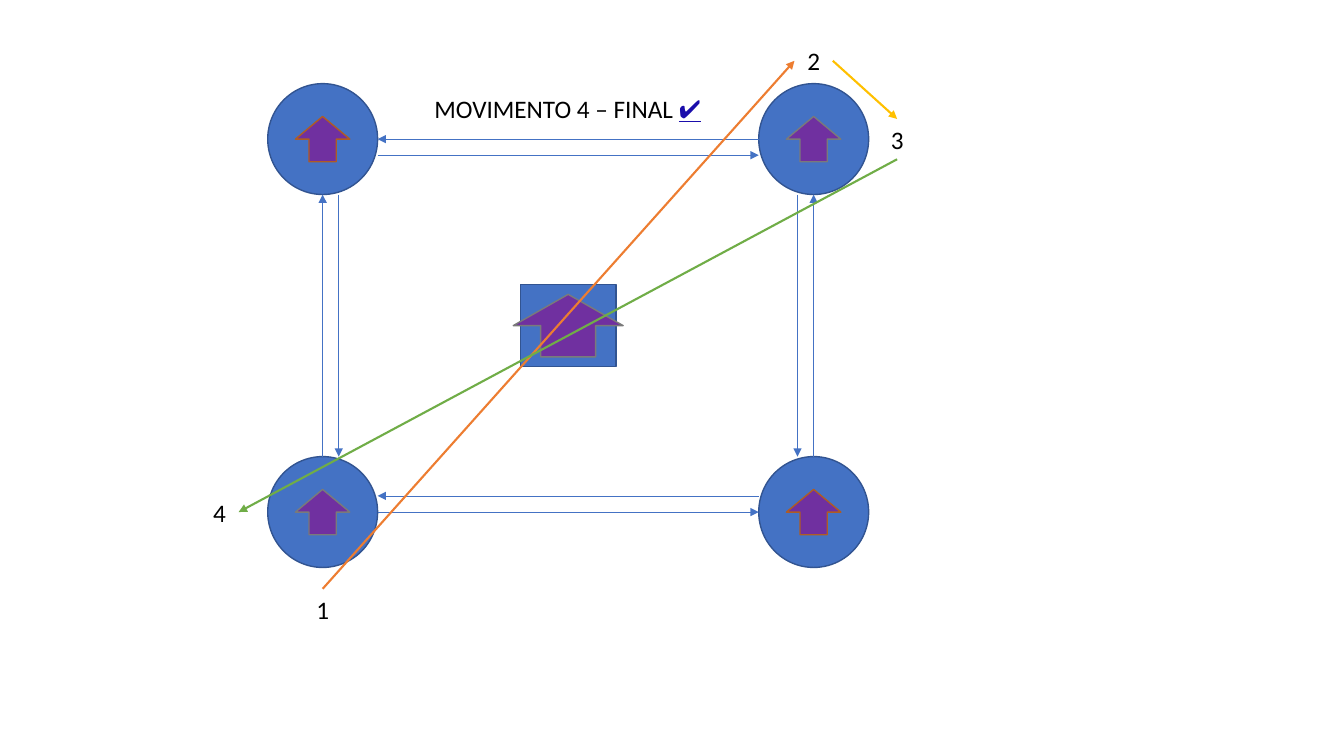
from dataclasses import dataclass
from itertools import product

from lxml.etree import SubElement
from pptx import Presentation
from pptx.dml.color import RGBColor
from pptx.enum.shapes import MSO_CONNECTOR as Connector, MSO_SHAPE as Shape
from pptx.enum.text import MSO_ANCHOR as Anchor, MSO_AUTO_SIZE as AutoSize, PP_ALIGN as Align
from pptx.oxml.ns import qn
from pptx.util import Inches, Pt

COLORS = {
    "blue": "4472C4", "blue_edge": "325491", "purple": "7030A0",
    "gray": "7A7A7A", "brown": "AF5C24", "black": "000000", "link": "1A0DAB",
    "orange": "ED7D31", "yellow": "FFC000", "green": "70AD47",
}
CIRCLE = (1.09, 1.1)
POST = (0.95, 0.81)
LABEL = (0.38, 0.4)
LANE_GAP = 0.16
TOP, LEFT, BOTTOM, RIGHT = range(4)


@dataclass
class Box:
    """A region in inches whose inner points are given as shares."""
    left: float
    top: float
    width: float
    height: float

    def point(self, column, row):
        """Return the point at the given shares of width and height."""
        return self.left + column * self.width, self.top + row * self.height


def color(name):
    """Return the named palette colour."""
    return RGBColor.from_string(COLORS[name])


def frame(center, size):
    """Return left, top, width and height of a centred area."""
    (x, y), (width, height) = center, size
    return [Inches(v) for v in (x - width / 2, y - height / 2, width, height)]


def add_figure(slide, kind, center, size, fill, edge, rotation=0):
    """Add a filled preset shape around a centre."""
    shape = slide.shapes.add_shape(kind, *frame(center, size))
    shape.rotation = rotation
    shape.shadow.inherit = False
    shape.fill.solid()
    shape.fill.fore_color.rgb = color(fill)
    shape.line.color.rgb = color(edge)
    shape.line.width = Pt(1)


def add_arrow(slide, start, end, line_color, width):
    """Add a straight line with a triangle at its end."""
    arrow = slide.shapes.add_connector(
        Connector.STRAIGHT, *[Inches(v) for v in (*start, *end)])
    arrow.line.color.rgb = color(line_color)
    arrow.line.width = Pt(width)
    SubElement(arrow.line._get_or_add_ln(), qn("a:tailEnd"), type="triangle")
    SubElement(arrow._element.spPr, qn("a:effectLst"))
    return arrow


def write(shape, text):
    """Set centred 18 point black text and return its paragraph."""
    text_frame = shape.text_frame
    text_frame.text = text
    text_frame.word_wrap = True
    text_frame.auto_size = AutoSize.SHAPE_TO_FIT_TEXT
    text_frame.vertical_anchor = Anchor.TOP
    paragraph = text_frame.paragraphs[0]
    paragraph.alignment = Align.CENTER
    style(paragraph.runs[0], "Calibri", "black")
    return paragraph


def style(run, font_name, font_color):
    """Format a run at 18 points."""
    run.font.size = Pt(18)
    run.font.name = font_name
    run.font.color.rgb = color(font_color)


def add_title(slide, box):
    """Place the title with its check mark."""
    title = slide.shapes.title
    title.left, title.top, title.width, title.height = [
        Inches(v) for v in (box.left, box.top, box.width, box.height)]
    paragraph = write(title, "MOVIMENTO 4 – FINAL ")
    check = paragraph.add_run()
    check.text = "✔️"
    style(check, "Arial", "link")
    check.font.underline = True


def add_lanes(slide, box):
    """Draw a pair of opposite lanes along each side of the formation."""
    half_width, half_height = (length / 2 for length in CIRCLE)
    right, bottom = box.point(1, 1)
    high, low = box.top + half_height, bottom - half_height
    near, far = box.left + half_width, right - half_width
    for x, inward in ((box.left, LANE_GAP), (right, -LANE_GAP)):
        add_arrow(slide, (x, low), (x, high), "blue", 0.5)
        add_arrow(slide, (x + inward, high), (x + inward, low), "blue", 0.5)
    for left_y, right_y in ((box.top, box.top + LANE_GAP), (bottom - LANE_GAP, bottom)):
        add_arrow(slide, (far, left_y), (near, left_y), "blue", 0.5)
        add_arrow(slide, (near, right_y), (far, right_y), "blue", 0.5)


def add_formation(slide, box):
    """Draw the four corner circles, the lanes and the central post."""
    corners = list(product((0, 1), repeat=2))
    for corner in corners:
        add_figure(slide, Shape.OVAL, box.point(*corner), CIRCLE, "blue", "blue_edge")
    add_lanes(slide, box)
    middle = box.point(0.5, 0.5)
    add_figure(slide, Shape.RECTANGLE, middle, POST, "blue", "blue_edge")
    add_figure(slide, Shape.RIGHT_ARROW, middle, (0.62, 1.09), "purple", "gray", 270)
    for column, row in corners:
        edge = "brown" if column == row else "gray"
        add_figure(slide, Shape.RIGHT_ARROW, box.point(column, row), (0.45, 0.54),
                   "purple", edge, 270)


def add_route(slide, box):
    """Number the stops around the formation and join them in order."""
    stops = []
    for number, place in enumerate(((0, 1.26), (1, -0.21), (1.17, 0), (-0.21, 1)), 1):
        label = slide.shapes.add_textbox(*frame(box.point(*place), LABEL))
        write(label, str(number))
        stops.append(label)
    legs = (("orange", TOP, LEFT), ("yellow", RIGHT, TOP), ("green", BOTTOM, RIGHT))
    for start, end, (leg_color, start_side, end_side) in zip(stops, stops[1:], legs):
        leg = add_arrow(slide, (0, 0), (1, 1), leg_color, 1.5)
        leg.begin_connect(start, start_side)
        leg.end_connect(end, end_side)


def main():
    """Build and save the movement slide."""
    presentation = Presentation()
    presentation.slide_width, presentation.slide_height = Inches(13.33), Inches(7.5)
    slide = presentation.slides.add_slide(presentation.slide_layouts[5])
    formation = Box(3.2, 1.38, 4.87, 3.7)
    add_title(slide, Box(3.74, 0.88, 3.78, 0.4))
    add_formation(slide, formation)
    add_route(slide, formation)
    presentation.save("out.pptx")


if __name__ == "__main__":
    main()
